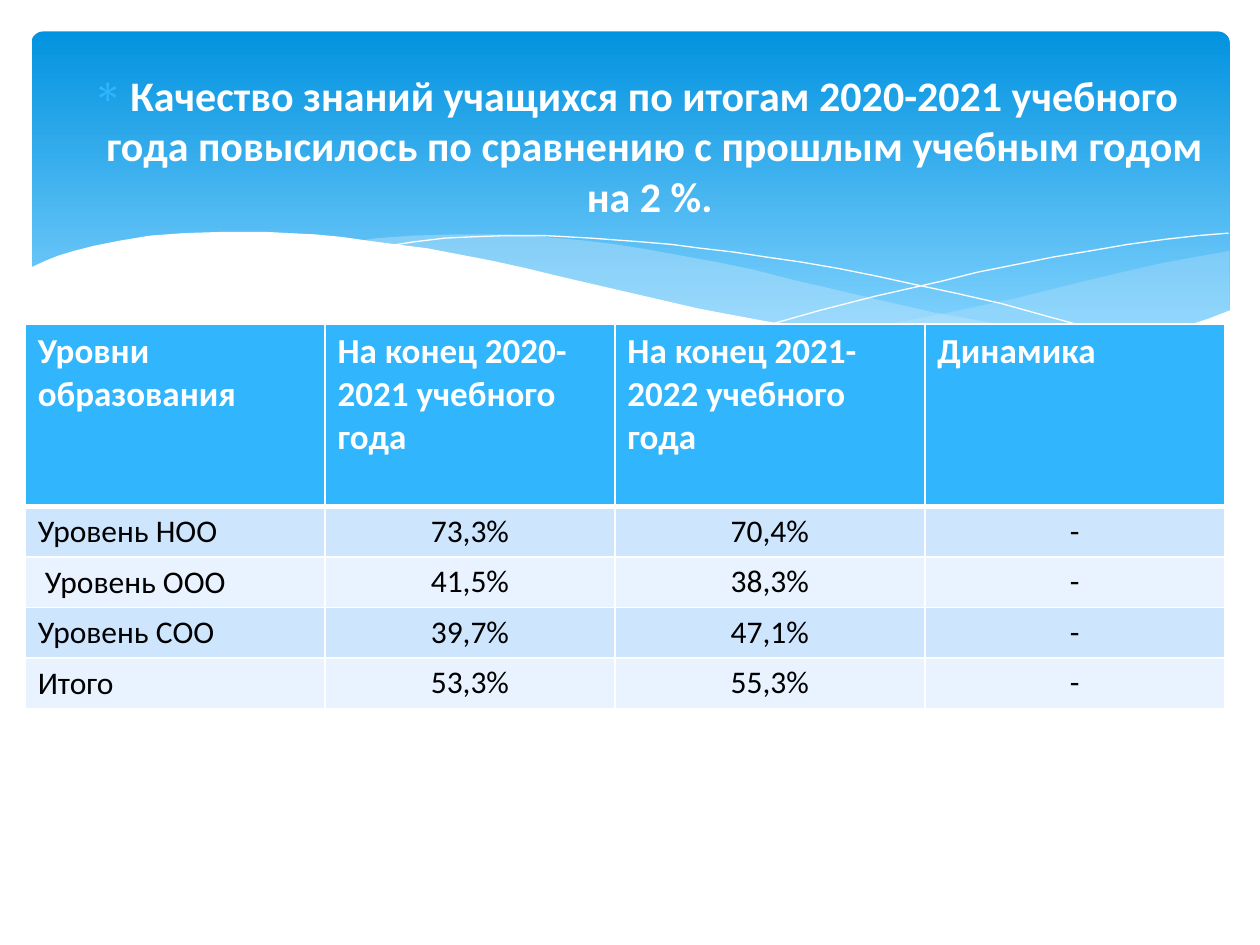
from lxml import etree
from pptx import Presentation
from pptx.dml.color import RGBColor
from pptx.enum.shapes import MSO_SHAPE
from pptx.enum.text import MSO_ANCHOR, PP_ALIGN
from pptx.oxml.ns import qn
from pptx.util import Inches, Pt

ROUNDED_RECTANGLE = MSO_SHAPE.ROUNDED_RECTANGLE
MIDDLE = MSO_ANCHOR.MIDDLE
CENTER = PP_ALIGN.CENTER
LEFT = PP_ALIGN.LEFT
WHITE = RGBColor(0xFF, 0xFF, 0xFF)
BLACK = RGBColor(0, 0, 0)
BANNER_TOP = RGBColor(0x02, 0x93, 0xE0)
BANNER_BOTTOM = RGBColor(0x83, 0xD3, 0xFE)
WAVE_BLUE = RGBColor(0xC6, 0xE7, 0xFC)
ACCENT = RGBColor(0x31, 0xB6, 0xFD)
BANDS = [RGBColor(0xCE, 0xE5, 0xFE), RGBColor(0xE8, 0xF3, 0xFF)]
FONT = "Calibri"


def add_wave(points, fill=None, opacity=100):
    """Draw a closed filled wave, or an open white hairline if fill is None."""
    builder = slide.shapes.build_freeform(
        Inches(points[0][0]), Inches(points[0][1]), scale=1.0)
    builder.add_line_segments(
        [(Inches(x), Inches(y)) for x, y in points[1:]], close=fill is not None)
    wave = builder.convert_to_shape()
    wave.shadow.inherit = False
    if fill is None:
        wave.fill.background()
        wave.line.color.rgb = WHITE
        wave.line.width = Pt(0)
        return
    wave.fill.solid()
    wave.fill.fore_color.rgb = fill
    wave.line.fill.background()
    if opacity < 100:
        color = wave.fill._xPr.find(qn("a:solidFill"))[0]
        etree.SubElement(color, qn("a:alpha"), val=str(opacity * 1000))


def add_run(paragraph, text, size, color, bold=False):
    run = paragraph.add_run()
    run.text = text
    run.font.name = FONT
    run.font.size = Pt(size)
    run.font.bold = bold
    run.font.color.rgb = color


presentation = Presentation()
presentation.slide_width = Inches(10)
presentation.slide_height = Inches(7.5)
slide = presentation.slides.add_slide(presentation.slide_layouts[6])

# Banner
banner = slide.shapes.add_shape(
    ROUNDED_RECTANGLE, Inches(0.25), Inches(0.25), Inches(9.51), Inches(2.7))
banner.adjustments[0] = 0.034
banner.shadow.inherit = False
banner.line.fill.background()
banner.fill.gradient()
banner.fill.gradient_angle = 270
stops = [(0, BANNER_TOP), (0.9, BANNER_BOTTOM)]
for stop, (position, color) in zip(banner.fill.gradient_stops, stops):
    stop.position = position
    stop.color.rgb = color

# Waves along the lower edge of the banner
add_wave([
    (9.76, 1.99), (9.48, 2.04), (9.21, 2.09), (8.91, 2.16), (8.61, 2.23),
    (8.05, 2.37), (7.53, 2.48), (7.06, 2.57), (6.61, 2.65), (6.91, 2.69),
    (7.18, 2.72), (7.45, 2.75), (7.69, 2.77), (8.03, 2.78), (8.35, 2.77),
    (8.63, 2.75), (8.89, 2.72), (9.13, 2.67), (9.35, 2.61), (9.63, 2.52),
    (9.76, 2.47),
], WAVE_BLUE, 29)
add_wave([
    (8.93, 2.73), (8.66, 2.69), (8.37, 2.65), (8.07, 2.6), (7.75, 2.54),
    (7.41, 2.48), (7.06, 2.4), (6.68, 2.31), (6.29, 2.22), (5.98, 2.14),
    (5.69, 2.08), (5.41, 2.03), (5.14, 1.98), (4.89, 1.94), (4.65, 1.91),
    (4.42, 1.89), (4.2, 1.87), (3.99, 1.86), (3.61, 1.86), (3.28, 1.87),
    (2.99, 1.89), (2.86, 1.91), (3.23, 1.96), (3.62, 2.03), (4.04, 2.11),
    (4.49, 2.22), (4.91, 2.32), (5.3, 2.4), (5.66, 2.48), (6.01, 2.55),
    (6.34, 2.61), (6.65, 2.66), (6.95, 2.7), (7.22, 2.74), (7.48, 2.76),
    (7.73, 2.77), (7.96, 2.78), (8.28, 2.78), (8.57, 2.77), (8.76, 2.75),
], WAVE_BLUE, 40)
add_wave([
    (3.09, 1.95), (3.28, 1.92), (3.53, 1.89), (3.74, 1.88), (4.01, 1.87),
    (4.33, 1.87), (4.69, 1.89), (5.1, 1.92), (5.33, 1.94), (5.56, 1.97),
    (5.82, 2), (6.08, 2.04), (6.36, 2.08), (6.65, 2.13), (6.95, 2.19),
    (7.27, 2.26), (7.6, 2.33), (7.95, 2.41), (8.31, 2.51), (8.68, 2.61),
    (9.07, 2.72),
])
add_wave([
    (6.13, 2.57), (6.52, 2.46), (6.95, 2.35), (7.48, 2.23), (7.76, 2.16),
    (8.06, 2.1), (8.36, 2.04), (8.66, 1.99), (8.95, 1.94), (9.24, 1.9),
    (9.51, 1.87), (9.75, 1.85),
])
add_wave([
    (9.77, 2.46), (9.59, 2.53), (9.4, 2.59), (9.2, 2.65), (8.99, 2.69),
    (8.75, 2.73), (8.5, 2.75), (8.23, 2.77), (7.93, 2.76), (7.61, 2.75),
    (7.26, 2.72), (6.88, 2.68), (6.47, 2.62), (6.03, 2.54), (5.55, 2.45),
    (5.03, 2.33), (4.47, 2.2), (4.18, 2.13), (3.91, 2.07), (3.65, 2.02),
    (3.39, 1.97), (3.15, 1.94), (2.92, 1.91), (2.71, 1.88), (2.5, 1.86),
    (2.3, 1.85), (2.11, 1.84), (1.77, 1.84), (1.46, 1.85), (1.19, 1.87),
    (0.95, 1.91), (0.75, 1.95), (0.59, 1.99), (0.46, 2.03), (0.36, 2.07),
    (0.23, 2.13), (0.23, 3.29), (9.77, 3.29),
], WHITE)

# Title with an asterisk bullet
title = slide.shapes.add_textbox(
    Inches(0.28), Inches(0.52), Inches(9.53), Inches(1.26))
title.text_frame.word_wrap = True
title.text_frame.vertical_anchor = MIDDLE
paragraph = title.text_frame.paragraphs[0]
paragraph.alignment = CENTER
paragraph.space_before = Pt(4.8)
add_run(paragraph,
        "Качество знаний учащихся по итогам 2020-2021 учебного года повысилось "
        "по сравнению с прошлым учебным годом на 2 %. ", 24, WHITE, bold=True)
properties = paragraph._p.get_or_add_pPr()
properties.set("marL", str(Inches(0.3)))
properties.set("indent", str(Inches(-0.3)))
bullet_color = etree.SubElement(properties, qn("a:buClr"))
etree.SubElement(bullet_color, qn("a:srgbClr"), val=str(ACCENT))
etree.SubElement(properties, qn("a:buChar"), char="∗")

# Results table
rows = [
    ["Уровни образования", "На конец 2020-2021 учебного года",
     "На конец 2021-2022 учебного года", "Динамика"],
    ["Уровень НОО", "73,3%", "70,4%", "-"],
    [" Уровень ООО", "41,5%", "38,3%", "-"],
    ["Уровень СОО", "39,7%", "47,1%", "-"],
    ["Итого", "53,3%", "55,3%", "-"],
]
column_widths = [2.38, 2.3, 2.46, 2.38]
row_heights = [1.45] + [0.4] * 4
table = slide.shapes.add_table(
    len(rows), len(column_widths), Inches(0.2), Inches(2.57),
    Inches(sum(column_widths)), Inches(sum(row_heights))).table
for column, width in zip(table.columns, column_widths):
    column.width = Inches(width)
for row, height in zip(table.rows, row_heights):
    row.height = Inches(height)

for row_index, texts in enumerate(rows):
    is_header = row_index == 0
    for column_index, text in enumerate(texts):
        cell = table.cell(row_index, column_index)
        widths = {"L": 1, "R": 1, "T": 3 if row_index == 1 else 1,
                  "B": 3 if is_header else 1}
        for side, width in widths.items():
            border = etree.SubElement(
                cell._tc.get_or_add_tcPr(), qn("a:ln" + side), w=str(Pt(width)))
            border_fill = etree.SubElement(border, qn("a:solidFill"))
            etree.SubElement(border_fill, qn("a:srgbClr"), val=str(WHITE))
        cell.fill.solid()
        cell.fill.fore_color.rgb = ACCENT if is_header else BANDS[(row_index - 1) % 2]
        paragraph = cell.text_frame.paragraphs[0]
        paragraph.alignment = LEFT
        if not is_header and column_index > 0:
            paragraph.alignment = CENTER
            paragraph.line_spacing = 1.15
            cell.margin_left = cell.margin_right = Inches(0.07)
            cell.margin_top = cell.margin_bottom = 0
        add_run(paragraph, text, 20 if is_header else 18,
                WHITE if is_header else BLACK, bold=is_header)

presentation.save("out.pptx")
